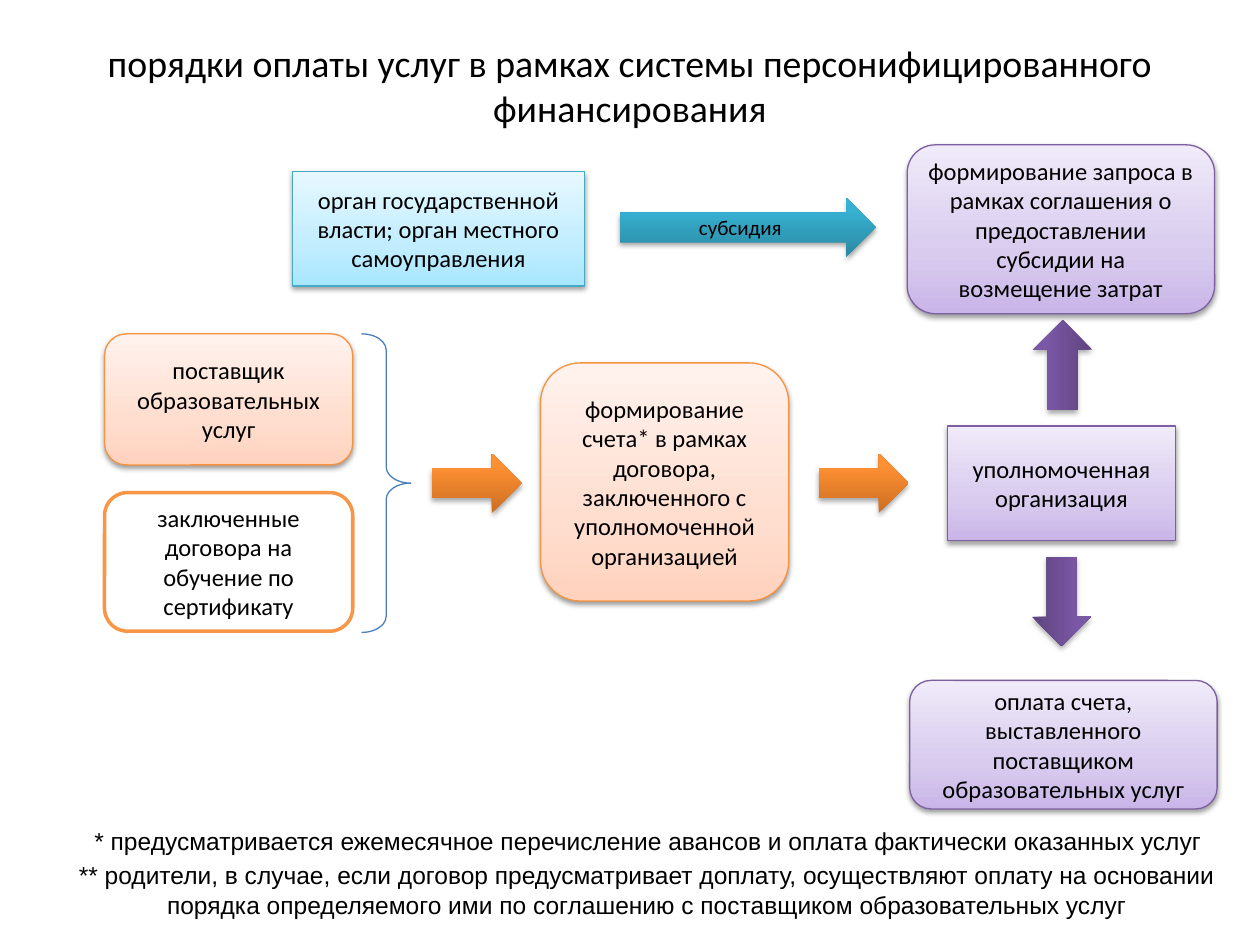
from copy import deepcopy

from lxml import etree
from pptx import Presentation, util as u
from pptx.dml.color import RGBColor
from pptx.enum import shapes, text
from pptx.oxml import ns

BLACK = RGBColor(0x00, 0x00, 0x00)
WHITE = RGBColor(0xFF, 0xFF, 0xFF)
ORANGE = RGBColor(0xF7, 0x96, 0x46)
ORANGE_LINE = RGBColor(0xF6, 0x92, 0x40)
PURPLE_LINE = RGBColor(0x7D, 0x60, 0xA0)
TEAL_LINE = RGBColor(0x46, 0xAA, 0xC5)
BLUE_LINE = RGBColor(0x4B, 0x7E, 0xBC)


def colours(*codes):
    return [RGBColor.from_string(code) for code in codes]


# Gradients run from the bottom edge to the top edge.
PEACH = colours("FFD2BD", "FFDED0", "FFF2ED")
LILAC = colours("C9B5E8", "D8CBEE", "F0EAF9")
SKY = colours("A7E6FF", "C1EDFF", "E7F8FF")
ORANGE_ARROW = colours("CC6E20", "FF9034", "FF9136")
PURPLE_ARROW = colours("5F4480", "7B58A6", "7C57A8")
TEAL_ARROW = colours("2A88A2", "37B1D2", "34B4D6")

KIND = shapes.MSO_SHAPE
ARROW_SIZE = (0.71, 0.47)


class FlowPage:
    def __init__(self, page):
        self.page = page
        self.font = "Calibri"
        self.size = 14

    def set_text(self, frame, words, size=None, font=None):
        frame.word_wrap = True
        para = frame.paragraphs[0]
        para.text = words
        para.alignment = text.PP_ALIGN.CENTER
        para.font.name = font or self.font
        para.font.size = u.Pt(size or self.size)
        para.font.color.rgb = BLACK

    def label(self, place, words, size=None, font=None,
              anchor=text.MSO_ANCHOR.TOP):
        box = self.page.shapes.add_textbox(*map(u.Inches, place))
        box.text_frame.vertical_anchor = anchor
        self.set_text(box.text_frame, words, size, font)

    def shape(self, kind, place, line=None, width=0.75):
        shape = self.page.shapes.add_shape(kind, *map(u.Inches, place))
        shape.shadow.inherit = False
        if line is None:
            shape.line.fill.background()
        else:
            shape.line.color.rgb = line
            shape.line.width = u.Pt(width)
        return shape

    def shade(self, shape, gradient, middle):
        """Fill with a three-stop gradient whose second stop is at middle."""
        shape.fill.gradient()
        shape.fill.gradient_angle = 90
        stop_list = shape._element.spPr.find(".//" + ns.qn("a:gsLst"))
        stop_list.append(deepcopy(stop_list[-1]))
        stops = shape.fill.gradient_stops
        for stop, colour, position in zip(stops, gradient, (0, middle, 1)):
            stop.color.rgb = colour
            stop.position = position

    def drop_shadow(self, shape, opacity, distance):
        effects = shape._element.spPr.find(ns.qn("a:effectLst"))
        shadow = etree.SubElement(
            effects, ns.qn("a:outerShdw"), blurRad=str(u.Pt(3.1)),
            dist=str(u.Pt(distance)), dir="5400000", rotWithShape="0")
        colour = etree.SubElement(shadow, ns.qn("a:srgbClr"), val="000000")
        etree.SubElement(colour, ns.qn("a:alpha"), val=str(opacity * 1000))

    def box(self, kind, place, words, gradient, line):
        box = self.shape(kind, place, line)
        self.shade(box, gradient, 0.35)
        self.drop_shadow(box, 38, 1.6)
        self.set_text(box.text_frame, words)

    def outline_box(self, place, words):
        box = self.shape(KIND.ROUNDED_RECTANGLE, place, ORANGE, 2)
        box.fill.solid()
        box.fill.fore_color.rgb = WHITE
        self.set_text(box.text_frame, words)

    def arrow(self, place, gradient, rotation=0, words=None):
        arrow = self.shape(KIND.RIGHT_ARROW, place)
        arrow.rotation = rotation
        self.shade(arrow, gradient, 0.8)
        self.drop_shadow(arrow, 35, 1.8)
        if words:
            self.set_text(arrow.text_frame, words, 12)

    def brace(self, place):
        brace = self.shape(KIND.RIGHT_BRACE, place, BLUE_LINE)
        brace.fill.background()
        brace.adjustments[0] = 0.33


def main():
    deck = Presentation()
    deck.slide_width, deck.slide_height = u.Inches(10), u.Inches(7.5)
    flow = FlowPage(deck.slides.add_slide(deck.slide_layouts[6]))
    rounded, square = KIND.ROUNDED_RECTANGLE, KIND.RECTANGLE

    flow.label((0.5, 0.29, 9, 0.77),
               "порядки оплаты услуг в рамках системы персонифицированного "
               "финансирования", 21.6, anchor=text.MSO_ANCHOR.MIDDLE)

    flow.box(rounded, (0.83, 2.65, 1.97, 1.04),
             "поставщик образовательных услуг", PEACH, ORANGE_LINE)
    flow.outline_box((0.83, 3.91, 1.97, 1.1),
                     "заключенные договора на обучение по сертификату")
    flow.brace((2.87, 2.65, 0.39, 2.37))
    flow.box(rounded, (4.29, 2.88, 1.97, 1.89),
             "формирование счета* в рамках договора, заключенного с "
             "уполномоченной организацией", PEACH, ORANGE_LINE)
    for left in (3.43, 6.5):
        flow.arrow((left, 3.6, *ARROW_SIZE), ORANGE_ARROW)

    purple_boxes = [
        (square, (7.52, 3.38, 1.81, 0.91), "уполномоченная организация"),
        (rounded, (7.2, 1.15, 2.44, 1.34),
         "формирование запроса в рамках соглашения о предоставлении "
         "субсидии на возмещение затрат"),
        (rounded, (7.22, 5.4, 2.44, 1.02),
         "оплата счета, выставленного поставщиком образовательных услуг"),
    ]
    for kind, place, words in purple_boxes:
        flow.box(kind, place, words, LILAC, PURPLE_LINE)
    for left, top, rotation in ((8.07, 4.54, 90), (8.08, 2.66, 270)):
        flow.arrow((left, top, *ARROW_SIZE), PURPLE_ARROW, rotation)

    flow.box(square, (2.32, 1.36, 2.32, 0.91),
             "орган государственной власти; орган местного самоуправления",
             SKY, TEAL_LINE)
    flow.arrow((4.92, 1.57, 2.03, 0.47), TEAL_ARROW, words="субсидия")

    flow.label((0.5, 6.51, 9.29, 0.34),
               "* предусматривается ежемесячное перечисление авансов и оплата "
               "фактически оказанных услуг", font="Arial")
    flow.label((0.49, 6.78, 9.29, 0.57),
               "** родители, в случае, если договор предусматривает доплату, "
               "осуществляют оплату на основании порядка определяемого ими по "
               "соглашению с поставщиком образовательных услуг", font="Arial")

    deck.save("out.pptx")


if __name__ == "__main__":
    main()
